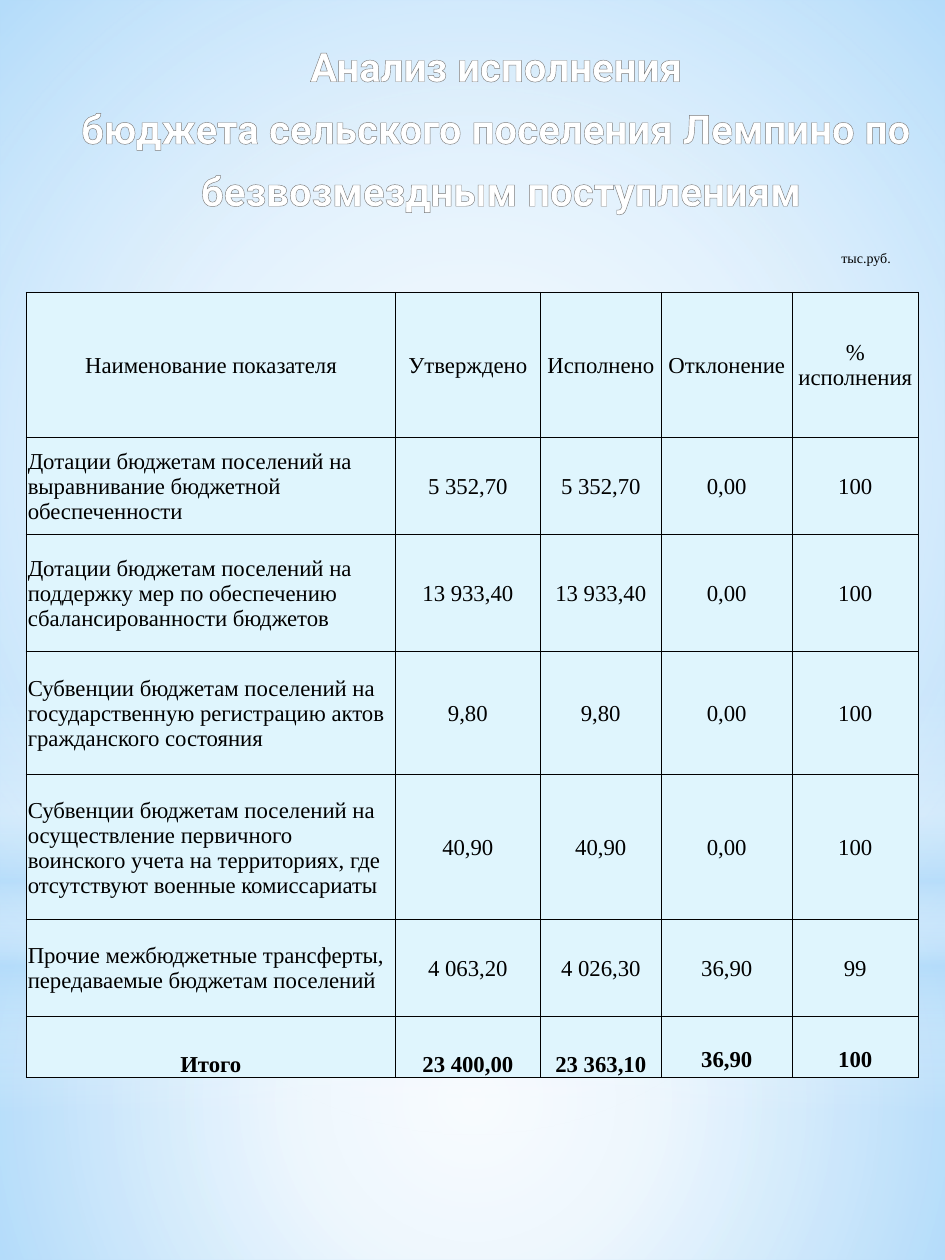
from lxml import etree
from pptx import Presentation
from pptx.dml.color import RGBColor
from pptx.enum.shapes import MSO_SHAPE
from pptx.enum.text import MSO_ANCHOR, MSO_AUTO_SIZE, PP_ALIGN
from pptx.oxml import parse_xml
from pptx.oxml.ns import qn
from pptx.util import Cm, Pt

RECT, OVAL = MSO_SHAPE.RECTANGLE, MSO_SHAPE.OVAL
TOP, MIDDLE, BOTTOM = MSO_ANCHOR.TOP, MSO_ANCHOR.MIDDLE, MSO_ANCHOR.BOTTOM
LEFT, CENTER = PP_ALIGN.LEFT, PP_ALIGN.CENTER
NS = "http://schemas.openxmlformats.org/drawingml/2006/main"

COLORS = {"sky": "B4DCFA", "white": "FFFFFF", "cell": "DFF5FD",
          "ink": "000000", "outline": "7D7D7D"}
TITLE = ["Анализ исполнения ",
         "бюджета сельского поселения Лемпино по ",
         "безвозмездным поступлениям"]
UNIT = "тыс.руб."
ROWS = [
    ("Наименование показателя", "Утверждено", "Исполнено", "Отклонение", "% исполнения"),
    ("Дотации бюджетам поселений на выравнивание бюджетной обеспеченности",
     "5 352,70", "5 352,70", "0,00", "100"),
    ("Дотации бюджетам поселений на поддержку мер по обеспечению сбалансированности бюджетов",
     "13 933,40", "13 933,40", "0,00", "100"),
    ("Субвенции бюджетам поселений на государственную регистрацию актов гражданского состояния",
     "9,80", "9,80", "0,00", "100"),
    ("Субвенции бюджетам поселений на осуществление первичного воинского учета "
     "на территориях, где отсутствуют военные комиссариаты",
     "40,90", "40,90", "0,00", "100"),
    ("Прочие межбюджетные трансферты, передаваемые бюджетам поселений",
     "4 063,20", "4 026,30", "36,90", "99"),
    ("Итого", "23 400,00", "23 363,10", "36,90", "100"),
]
COL_WIDTHS = [7.44, 2.92, 2.44, 2.64, 2.54]
ROW_HEIGHTS = [2.92, 1.95, 2.36, 2.49, 2.92, 1.95, 1.22]

RADIAL = '<a:path path="circle"><a:fillToRect l="50000" t="50000" r="50000" b="50000"/></a:path>'
LINEAR = '<a:lin ang="5400000" scaled="0"/>'
# shape, box, direction, stops of (position, colour, opacity)
BACKDROP = [
    (RECT, (0, 18.9, 19.05, 6.5), RADIAL,
     [(0, "white", 91), (37, "white", 76), (100, "sky", 79)]),
    (RECT, (0, 0, 19.05, 18.9), RADIAL,
     [(0, "white", 89), (48, "white", 62), (100, "sky", 79)]),
    (RECT, (0, 13.94, 19.05, 8.46), LINEAR,
     [(0, "white", 0), (29, "white", 30), (45, "sky", 40),
      (55, "white", 26), (65, "sky", 60), (100, "white", 0)]),
    (OVAL, (0, 5.92, 19.05, 18.9), RADIAL, [(0, "white", 100), (56, "white", 0)]),
]
TITLE_FONT = {"name": "Roboto", "size": Pt(23), "bold": True}
BODY_FONT = {"name": "Times New Roman", "size": Pt(13), "bold": False}
TOTAL_FONT = {**BODY_FONT, "bold": True}
UNIT_FONT = {**BODY_FONT, "size": Pt(8)}


def rgb(name):
    """Return the named colour."""
    return RGBColor.from_string(COLORS[name])


def assign(obj, values):
    """Set attributes from a dict."""
    for key, value in values.items():
        setattr(obj, key, value)


def write(p, text, font, color, align):
    """Put one formatted run into a paragraph."""
    p.alignment = align
    r = p.add_run()
    r.text = text
    assign(r.font, font)
    r.font.color.rgb = rgb(color)
    return r


def line_xml(tag, color, width):
    """Build a solid line element."""
    return parse_xml(f'<a:{tag} xmlns:a="{NS}" w="{Pt(width)}"><a:solidFill>'
                     f'<a:srgbClr val="{COLORS[color]}"/></a:solidFill></a:{tag}>')


def add_backdrop(slide):
    """Layer the translucent gradients of the sky."""
    fill = slide.background.fill
    fill.solid()
    fill.fore_color.rgb = rgb("sky")
    for kind, box, direction, stops in BACKDROP:
        sp = slide.shapes.add_shape(kind, *map(Cm, box))
        sp.shadow.inherit = False
        sp.line.fill.background()
        sp.fill.background()
        gs = "".join(f'<a:gs pos="{pos * 1000}"><a:srgbClr val="{COLORS[color]}">'
                     f'<a:alpha val="{alpha * 1000}"/></a:srgbClr></a:gs>'
                     for pos, color, alpha in stops)
        spPr = sp._element.spPr
        spPr.replace(spPr.find(qn("a:noFill")), etree.fromstring(
            f'<a:gradFill xmlns:a="{NS}" rotWithShape="1"><a:gsLst>{gs}</a:gsLst>'
            f'{direction}</a:gradFill>'))


def add_title(slide):
    """Place the outlined heading above the backdrop."""
    title = slide.shapes.title
    slide.shapes._spTree.append(title._element)
    assign(title, {"left": Cm(1.04), "top": Cm(0.71), "width": Cm(18.01), "height": Cm(4.6)})
    tf = title.text_frame
    assign(tf, {"vertical_anchor": TOP, "auto_size": MSO_AUTO_SIZE.NONE, "word_wrap": True})
    for i, text in enumerate(TITLE):
        p = tf.add_paragraph() if i else tf.paragraphs[0]
        assign(p, {"space_before": Pt(5), "space_after": Pt(3)})
        p._p.get_or_add_pPr().set("marL", str(Cm(0.13)))
        r = write(p, text, TITLE_FONT, "white", CENTER)
        r.font._element.insert(0, line_xml("ln", "outline", 0.83))


def add_budget_table(slide):
    """Build the budget table with its borders."""
    table = slide.shapes.add_table(len(ROWS), len(COL_WIDTHS), Cm(0.53), Cm(5.9),
                                   Cm(sum(COL_WIDTHS)), Cm(sum(ROW_HEIGHTS))).table
    assign(table, {"first_row": False, "horz_banding": False})
    for col, width in zip(table.columns, COL_WIDTHS):
        col.width = Cm(width)
    last = len(ROWS) - 1
    for i, (row, height) in enumerate(zip(ROWS, ROW_HEIGHTS)):
        table.rows[i].height = Cm(height)
        for j, text in enumerate(row):
            cell = table.cell(i, j)
            lowered = i == last and j > 2
            assign(cell, {"margin_left": Cm(0.03), "margin_right": Cm(0.03),
                          "margin_top": Cm(0.53 if lowered else 0.03), "margin_bottom": 0,
                          "vertical_anchor": BOTTOM if i == last and j < 3 else MIDDLE})
            cell.fill.solid()
            cell.fill.fore_color.rgb = rgb("cell")
            widths = {"lnL": 1 if j == 0 and i < last else 0.5, "lnR": 0.5,
                      "lnT": 1 if i == 0 and j < 3 else 0.5, "lnB": 0.5}
            tcPr = cell._tc.get_or_add_tcPr()
            for k, (tag, width) in enumerate(widths.items()):
                tcPr.insert(k, line_xml(tag, "ink", width))
            write(cell.text_frame.paragraphs[0], text, TOTAL_FONT if i == last else BODY_FONT,
                  "ink", LEFT if j == 0 and 0 < i < last else CENTER)


def main():
    """Build the budget execution slide."""
    prs = Presentation()
    assign(prs, {"slide_width": Cm(19.05), "slide_height": Cm(25.4)})
    slide = prs.slides.add_slide(prs.slide_layouts[5])
    add_backdrop(slide)
    add_title(slide)
    add_budget_table(slide)
    tf = slide.shapes.add_textbox(Cm(16.71), Cm(4.9), Cm(2.01), Cm(0.61)).text_frame
    tf.word_wrap = True
    write(tf.paragraphs[0], UNIT, UNIT_FONT, "ink", LEFT)
    prs.save("out.pptx")


if __name__ == "__main__":
    main()
